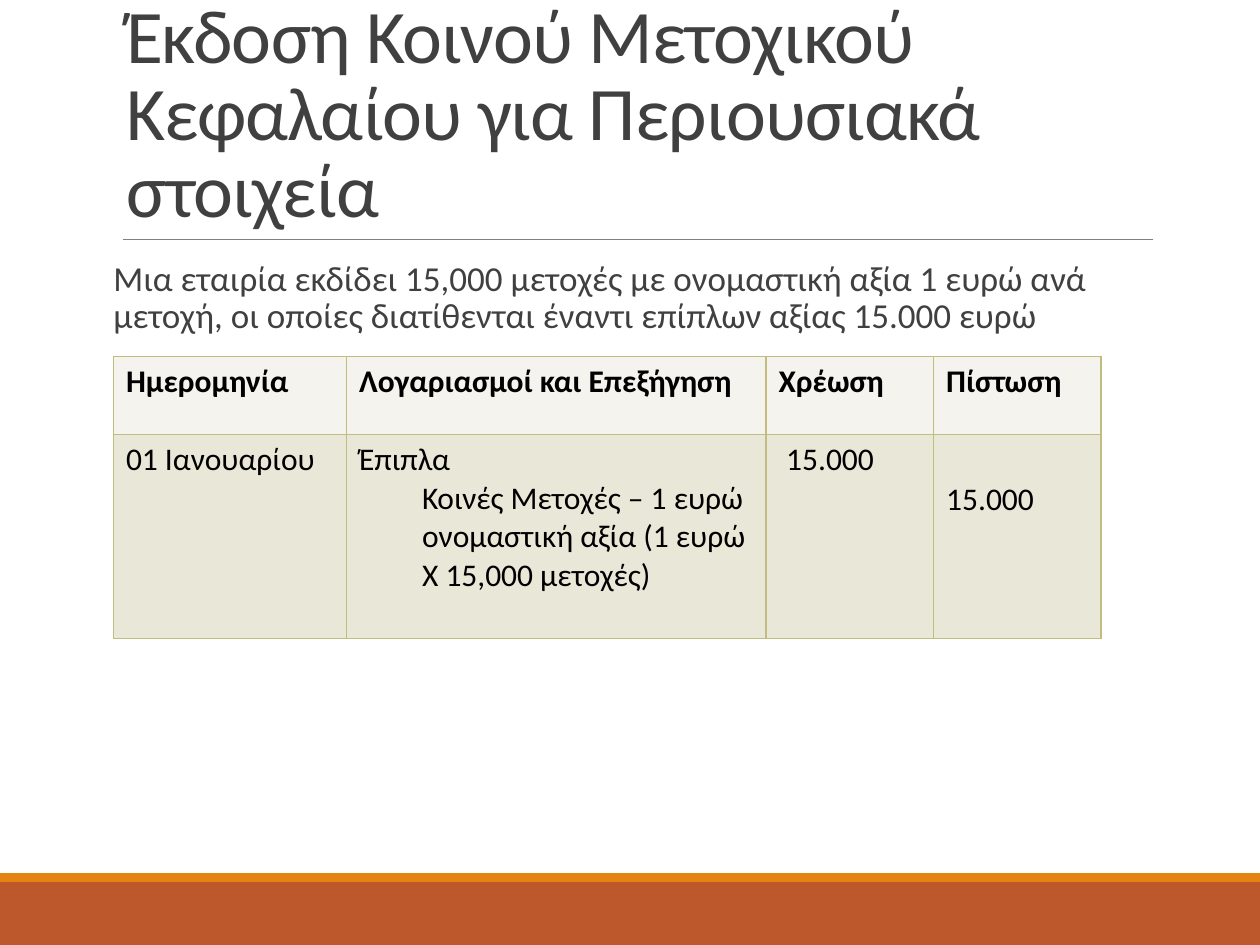
"""Build a slide on issuing common stock in exchange for assets."""
from lxml import etree
from pptx import Presentation
from pptx.dml.color import RGBColor
from pptx.enum.shapes import MSO_CONNECTOR, MSO_SHAPE
from pptx.enum.text import MSO_ANCHOR, MSO_AUTO_SIZE, PP_ALIGN
from pptx.oxml.ns import qn
from pptx.util import Inches, Pt

RECTANGLE = MSO_SHAPE.RECTANGLE
STRAIGHT = MSO_CONNECTOR.STRAIGHT
BOTTOM, TOP = MSO_ANCHOR.BOTTOM, MSO_ANCHOR.TOP
LEFT = PP_ALIGN.LEFT
NO_FIT = MSO_AUTO_SIZE.NONE
FONT = "Calibri"
COLORS = {
    "rust": "BD582C", "orange": "E48312", "rule": "808080", "text": "404040",
    "black": "000000", "header": "F4F3ED", "row": "E9E7D8", "border": "C2BC80",
}


def color(name):
    return RGBColor.from_string(COLORS[name])


def style(para, size, name, bold=False):
    para.alignment = LEFT
    for span in para.runs:
        span.font.name = FONT
        span.font.size = Pt(size)
        span.font.bold = bold
        span.font.color.rgb = color(name)


deck = Presentation()
deck.slide_width, deck.slide_height = Inches(10), Inches(7.5)
page = deck.slides.add_slide(deck.slide_layouts[1])

for top, height, name in [(7, 0.5, "rust"), (6.93, 0.07, "orange")]:
    band = page.shapes.add_shape(RECTANGLE, 0, Inches(top), Inches(10), Inches(height))
    band.shadow.inherit = False
    band.fill.solid()
    band.fill.fore_color.rgb = color(name)
    band.line.fill.background()

rule = page.shapes.add_connector(STRAIGHT, Inches(0.98), Inches(1.9), Inches(9.15), Inches(1.9))
rule.line.color.rgb = color("rule")
rule.line.width = Pt(0.5)
etree.SubElement(rule._element.spPr, qn("a:effectLst"))

title = page.shapes.title
title.left, title.top, title.width, title.height = map(Inches, (0.9, 0.31, 8.25, 1.59))
title.text_frame.text = "Έκδοση Κοινού Μετοχικού Κεφαλαίου για Περιουσιακά στοιχεία"
title.text_frame.vertical_anchor = BOTTOM
title.text_frame.auto_size = NO_FIT
heading = title.text_frame.paragraphs[0]
heading.line_spacing = 0.85
style(heading, 43.2, "text")
heading.runs[0].font._element.set("spc", "-50")

body = page.placeholders[1]
body.left, body.top, body.width, body.height = map(Inches, (0.9, 2.02, 8.25, 4.4))
frame = body.text_frame
frame.text = (
    "Μια εταιρία εκδίδει 15,000 μετοχές με ονομαστική αξία 1 ευρώ ανά μετοχή, "
    "οι οποίες διατίθενται έναντι επίπλων αξίας 15.000 ευρώ"
)
frame.margin_left = frame.margin_right = 0
frame.margin_top = frame.margin_bottom = Inches(0.05)
frame.vertical_anchor = TOP
frame.auto_size = NO_FIT
intro = frame.paragraphs[0]
intro.line_spacing = 0.9
intro.space_before, intro.space_after = Pt(12), Pt(2)
style(intro, 20, "text")
properties = intro._p.get_or_add_pPr()
properties.set("marL", "0")
properties.set("indent", "0")
etree.SubElement(properties, qn("a:buNone"))

entries = [
    ["Ημερομηνία", "Λογαριασμοί και Επεξήγηση", "Χρέωση", "Πίστωση"],
    [
        "01 Ιανουαρίου",
        "Έπιπλα\nΚοινές Μετοχές – 1 ευρώ ονομαστική αξία (1 ευρώ Χ 15,000 μετοχές)",
        "15.000",
        "15.000",
    ],
]
widths, heights = [1.85, 3.33, 1.33, 1.33], [0.62, 1.62]
journal = page.shapes.add_table(
    2, 4, Inches(0.9), Inches(2.83), Inches(sum(widths)), Inches(sum(heights))
).table
for column, width in zip(journal.columns, widths):
    column.width = Inches(width)
for index, (row, height) in enumerate(zip(journal.rows, heights)):
    row.height = Inches(height)
    for cell, entry in zip(row.cells, entries[index]):
        cell.text_frame.text = entry
        for para in cell.text_frame.paragraphs:
            style(para, 18, "black", bold=index == 0)
        cell_properties = cell._tc.get_or_add_tcPr()
        for side in ("lnL", "lnR", "lnT", "lnB"):
            border = etree.SubElement(cell_properties, qn(f"a:{side}"), w=str(Pt(1)))
            fill = etree.SubElement(border, qn("a:solidFill"))
            etree.SubElement(fill, qn("a:srgbClr"), val=COLORS["border"])
        cell.fill.solid()
        cell.fill.fore_color.rgb = color("header" if index == 0 else "row")

credit_account = journal.cell(1, 1).text_frame.paragraphs[1]
credit_account.level = 1
credit_account._p.get_or_add_pPr().set("marL", str(Inches(0.5)))
journal.cell(1, 2).margin_left = Inches(0.16)
journal.cell(1, 3).margin_top = Inches(0.36)

deck.save("out.pptx")
